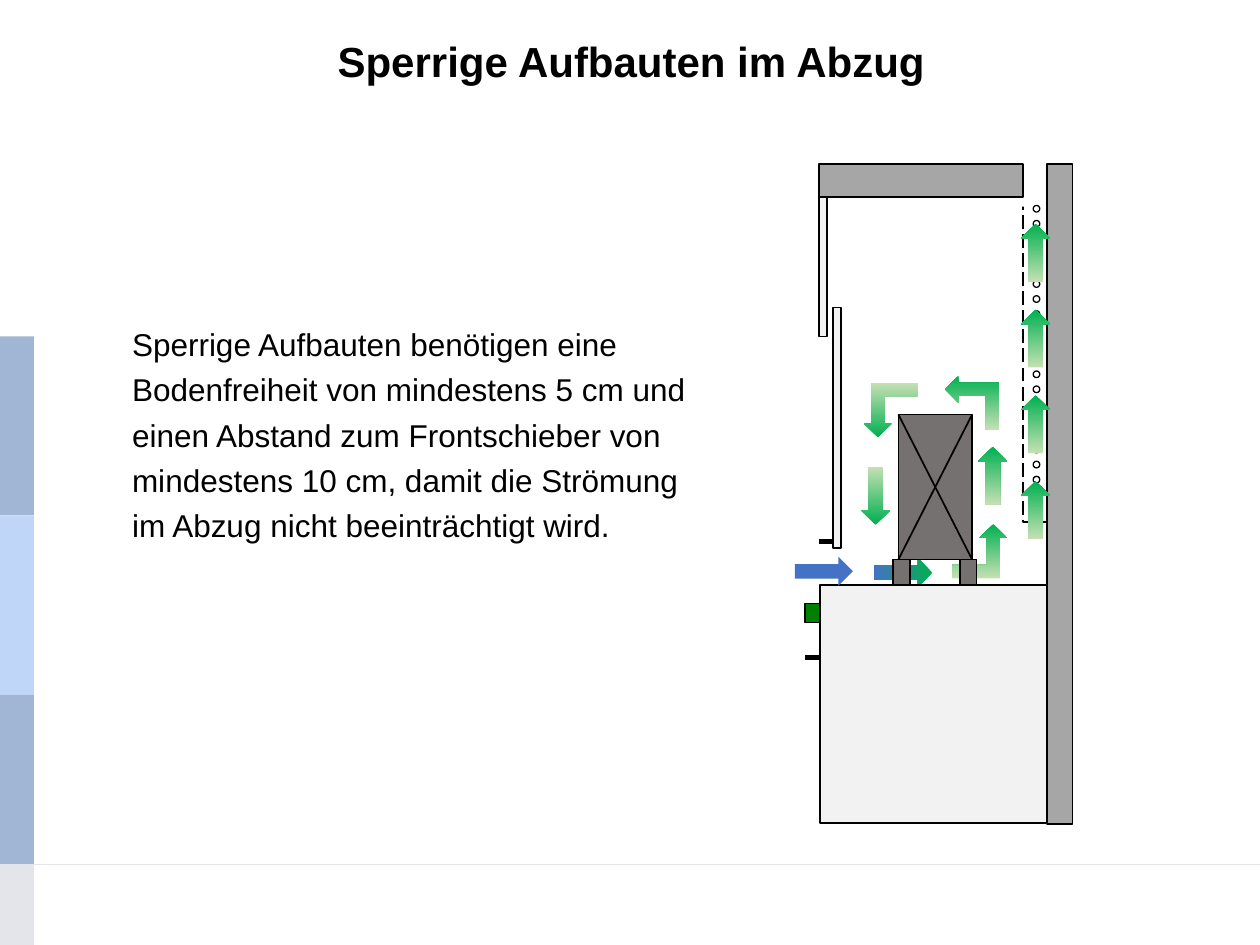
import pptx
import pptx.dml.color
import pptx.enum.dml
import pptx.enum.shapes
import pptx.enum.text
import pptx.oxml.ns
import pptx.util
from lxml import etree

Pt = pptx.util.Pt
RGBColor = pptx.dml.color.RGBColor
SHAPE = pptx.enum.shapes.MSO_SHAPE
ALIGN = pptx.enum.text.PP_ALIGN

BLACK = RGBColor(0x00, 0x00, 0x00)
WHITE = RGBColor(0xFF, 0xFF, 0xFF)
BAR_BLUE = RGBColor(0xA1, 0xB6, 0xD4)
BAR_LIGHT = RGBColor(0xBF, 0xD6, 0xF8)
BAR_GREY = RGBColor(0xE4, 0xE5, 0xEA)
PANEL_GREY = RGBColor(0xF2, 0xF2, 0xF2)
WALL_GREY = RGBColor(0xA6, 0xA6, 0xA6)
APPARATUS_GREY = RGBColor(0x76, 0x71, 0x71)
SWITCH_GREEN = RGBColor(0x00, 0x80, 0x00)
FLOW_GREEN = RGBColor(0x00, 0xB0, 0x50)
FLOW_PALE = RGBColor(0xC5, 0xE0, 0xB4)
FLOW_BLUE = RGBColor(0x44, 0x72, 0xC4)

ARROW_WIDTH, ARROW_HEIGHT, BEND_SIZE = 33.1, 16.6, 31


def add_shape(slide, kind, left, top, width, height, fill=None, line_width=None):
    shape = slide.shapes.add_shape(kind, Pt(left), Pt(top), Pt(width), Pt(height))
    shape.shadow.inherit = False
    if fill is None:
        shape.fill.background()
    else:
        shape.fill.solid()
        shape.fill.fore_color.rgb = fill
    if line_width is None:
        shape.line.fill.background()
    else:
        shape.line.color.rgb = BLACK
        shape.line.width = Pt(line_width)
    return shape


def add_line(slide, x1, y1, x2, y2, color, width):
    line = slide.shapes.add_connector(
        pptx.enum.shapes.MSO_CONNECTOR.STRAIGHT, Pt(x1), Pt(y1), Pt(x2), Pt(y2))
    line.line.color.rgb = color
    line.line.width = Pt(width)
    etree.SubElement(line._element.spPr, pptx.oxml.ns.qn("a:effectLst"))


def add_flow(slide, left, top, rotation=0, bent=False, angle=180, tail=FLOW_PALE):
    """Air flow arrow whose colour runs from green at the tip to the tail colour."""
    if bent:
        kind, width, height = SHAPE.BENT_UP_ARROW, BEND_SIZE, BEND_SIZE
    else:
        kind, width, height = SHAPE.RIGHT_ARROW, ARROW_WIDTH, ARROW_HEIGHT
    arrow = add_shape(slide, kind, left, top, width, height)
    arrow.rotation = rotation
    arrow.fill.gradient()
    arrow.fill.gradient_angle = angle
    for stop, color in zip(arrow.fill.gradient_stops, (FLOW_GREEN, tail)):
        stop.color.rgb = color


def add_text(slide, left, top, width, height, text, size, bold=False,
             alignment=ALIGN.LEFT, line_spacing=1.0):
    box = slide.shapes.add_textbox(Pt(left), Pt(top), Pt(width), Pt(height))
    frame = box.text_frame
    frame.word_wrap = True
    frame.auto_size = pptx.enum.text.MSO_AUTO_SIZE.SHAPE_TO_FIT_TEXT
    paragraph = frame.paragraphs[0]
    paragraph.alignment = alignment
    paragraph.line_spacing = line_spacing
    run = paragraph.add_run()
    run.text = text
    run.font.name = "Arial"
    run.font.size = Pt(size)
    run.font.bold = bold
    run.font.color.rgb = BLACK


def add_side_bar(slide, left, top, width, line_end):
    for height, color in ((102.4, BAR_BLUE), (102.6, BAR_LIGHT),
                          (96.8, BAR_BLUE), (46, BAR_GREY)):
        if color == BAR_GREY:
            add_line(slide, left, top, line_end, top, BAR_GREY, 0.5)
        add_shape(slide, SHAPE.RECTANGLE, left, top, width, height, color)
        top += height


def add_cabinet(slide, left, top):
    """Body of the fume hood in section: base, sashes, handles, duct and walls."""
    def panel(x, y, width, height, fill, line_width=1):
        return add_shape(slide, SHAPE.RECTANGLE, left + x, top + y,
                         width, height, fill, line_width)

    def handle(x1, x2, y):
        add_line(slide, left + x1, top + y, left + x2, top + y, BLACK, 3)

    panel(0.7, 240.5, 130.3, 136.1, PANEL_GREY)
    panel(7.9, 82.1, 4.7, 137.5, PANEL_GREY)
    panel(0, 18.7, 4.5, 80, PANEL_GREY)
    handle(-7.9, 0.7, 282.2)
    panel(-7.9, 251.3, 8.6, 10.8, SWITCH_GREEN)
    handle(0, 7.9, 216)
    baffle = panel(116.6, 23.8, 14.4, 180.7, WHITE)
    baffle.line.dash_style = pptx.enum.dml.MSO_LINE.LONG_DASH
    panel(115.9, -14.4, 14.4, 38.9, WHITE, None)
    panel(130.3, 0, 14.6, 377.3, WALL_GREY)
    panel(0, 0, 116.6, 19.2, WALL_GREY)
    for index in range(21):
        add_shape(slide, SHAPE.OVAL, left + 122.4, top + 23.8 + 8.6 * index,
                  3.8, 3.8, line_width=0.75)


def add_air_flow(slide, left, top):
    for index in range(4):
        add_flow(slide, left + 107.3, top + 42.5 + 49 * index, 270)
    add_flow(slide, left + 82.8, top + 169.9, 270)
    add_flow(slide, left + 15.8, top + 181.4, 90)
    for x, y, rotation, angle in ((76.3, 205.9, 0, 270), (72, 121, 270, 180),
                                  (25.9, 125.3, 180, 270)):
        add_flow(slide, left + x, top + y, rotation, True, angle)
    add_shape(slide, SHAPE.RIGHT_ARROW, left - 13.7, top + 224.6,
              ARROW_WIDTH, ARROW_HEIGHT, FLOW_BLUE)


def add_apparatus(slide, left, top, width, height):
    """Bulky crossed box standing on two feet."""
    bottom = top + height
    for offset in (-2.9, 35.2):
        add_shape(slide, SHAPE.RECTANGLE, left + offset, bottom,
                  9.4, 14.4, APPARATUS_GREY, 1)
    add_shape(slide, SHAPE.RECTANGLE, left, top, width, height, APPARATUS_GREY, 1)
    add_line(slide, left, top, left + width, bottom, BLACK, 1)
    add_line(slide, left, bottom, left + width, top, BLACK, 1)


def add_fume_hood(slide, left, top):
    add_flow(slide, left + 31.7, top + 225.4, tail=FLOW_BLUE)
    add_cabinet(slide, left, top)
    add_air_flow(slide, left, top)
    add_apparatus(slide, left + 45.4, top + 143.3, 42.1, 82.8)


def main():
    presentation = pptx.Presentation()
    presentation.slide_width = Pt(720)
    presentation.slide_height = Pt(540)
    slide = presentation.slides.add_slide(presentation.slide_layouts[6])
    add_side_bar(slide, 0, 192.2, 19.4, 720)
    add_text(slide, 78.5, 16.6, 564.5, 36, "Sperrige Aufbauten im Abzug", 24,
             bold=True, alignment=ALIGN.CENTER)
    add_text(slide, 68.4, 177.8, 340.6, 136.1,
             "Sperrige Aufbauten benötigen eine Bodenfreiheit von mindestens 5 cm "
             "und einen Abstand zum Frontschieber von mindestens 10 cm, damit die "
             "Strömung im Abzug nicht beeinträchtigt wird.", 18, line_spacing=1.2)
    add_fume_hood(slide, 468, 93.6)
    presentation.save("out.pptx")


if __name__ == "__main__":
    main()
